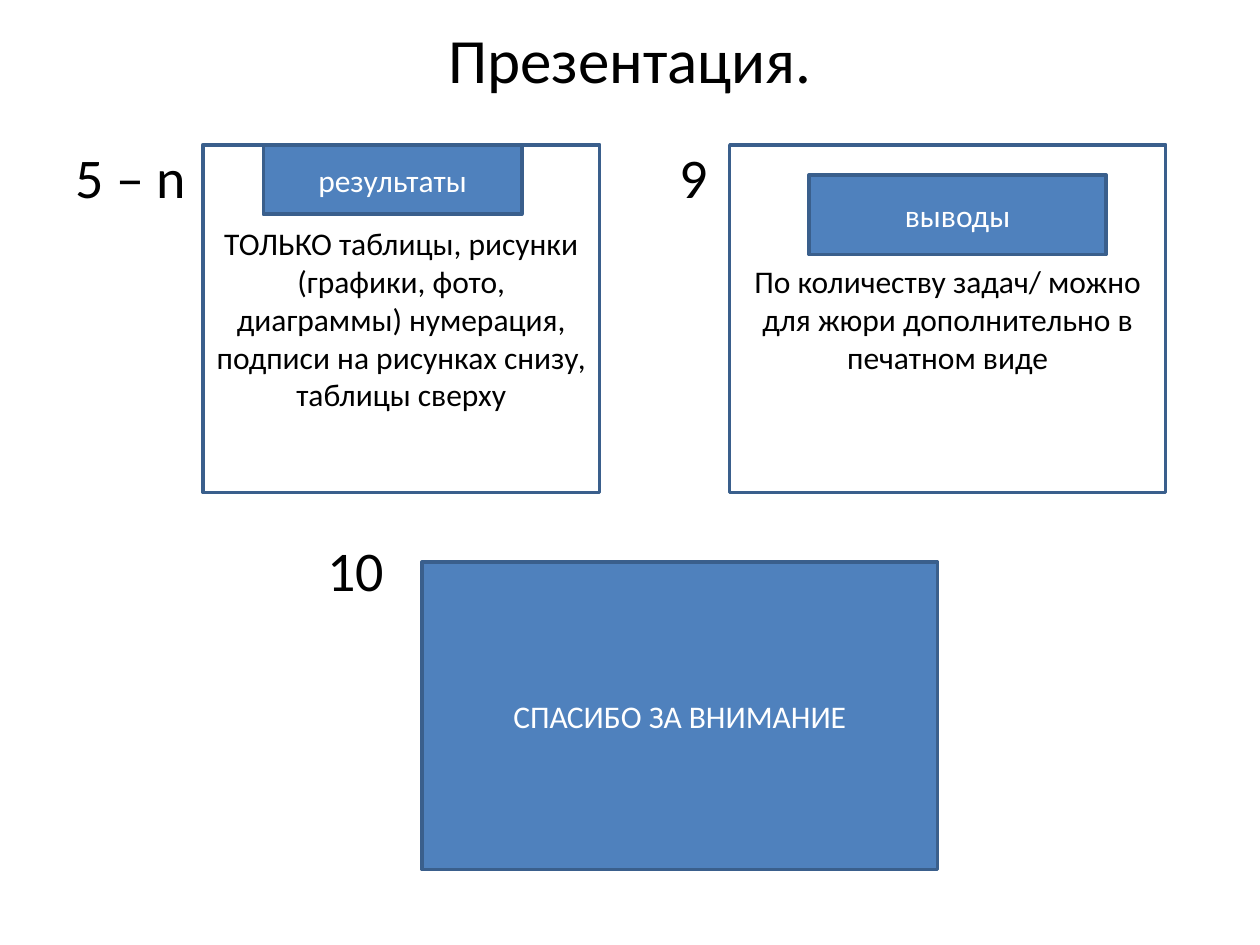
from pptx import Presentation
from pptx.dml.color import RGBColor
from pptx.enum.shapes import MSO_SHAPE
from pptx.enum.text import MSO_ANCHOR, PP_ALIGN
from pptx.util import Cm, Pt

RECT = MSO_SHAPE.RECTANGLE
TOP, MIDDLE = MSO_ANCHOR.TOP, MSO_ANCHOR.MIDDLE
LEFT, CENTER = PP_ALIGN.LEFT, PP_ALIGN.CENTER

BLACK = RGBColor(0x00, 0x00, 0x00)
WHITE = RGBColor(0xFF, 0xFF, 0xFF)
BLUE = RGBColor(0x4F, 0x81, 0xBD)
EDGE = RGBColor(0x3A, 0x5F, 0x8C)

ROW = 2.92  # top of the two upper cards, in cm


def write(shape, text, size, color, align=CENTER, anchor=MIDDLE):
    frame = shape.text_frame
    frame.word_wrap = True
    frame.vertical_anchor = anchor
    para = frame.paragraphs[0]
    para.text = text
    para.alignment = align
    para.font.name = "Calibri"
    para.font.size = Pt(size)
    para.font.color.rgb = color


def add_label(slide, box, text, size, **place):
    label = slide.shapes.add_textbox(*map(Cm, box))
    write(label, text, size, BLACK, **place)


def add_number(slide, left, top, text):
    add_label(slide, (left, top, 3, 1.6), text, 32, align=LEFT, anchor=TOP)


def add_box(slide, box, text, fill=BLUE, color=WHITE):
    rect = slide.shapes.add_shape(RECT, *map(Cm, box))
    rect.shadow.inherit = False
    rect.fill.solid()
    rect.fill.fore_color.rgb = fill
    rect.line.color.rgb = EDGE
    rect.line.width = Pt(2)
    write(rect, text, 18, color)


def add_card(slide, left, width, text, tab, head):
    """White card with a blue heading box placed over it."""
    add_box(slide, (left, ROW, width, 7.01), text, WHITE, BLACK)
    add_box(slide, tab, head)


def main():
    deck = Presentation()
    deck.slide_width, deck.slide_height = Cm(25.4), Cm(19.05)
    slide = deck.slides.add_slide(deck.slide_layouts[6])

    add_label(slide, (1.27, 0, 22.86, 2.34), "Презентация.", 36)

    add_number(slide, 1.27, 2.74, "5 – n")
    add_card(slide, 4.09, 8,
             "ТОЛЬКО таблицы, рисунки (графики, фото, диаграммы) нумерация, "
             "подписи на рисунках снизу, таблицы сверху",
             (5.31, ROW, 5.21, 1.4), "результаты")

    add_number(slide, 13.44, 2.74, "9")
    add_card(slide, 14.71, 8.79,
             "По количеству задач/ можно для жюри дополнительно в печатном виде",
             (16.31, 3.53, 5.99, 1.6), "выводы")

    add_number(slide, 6.35, 10.67, "10")
    add_box(slide, (8.51, 11.33, 10.39, 6.2), "СПАСИБО ЗА ВНИМАНИЕ")

    deck.save("out.pptx")


if __name__ == "__main__":
    main()
